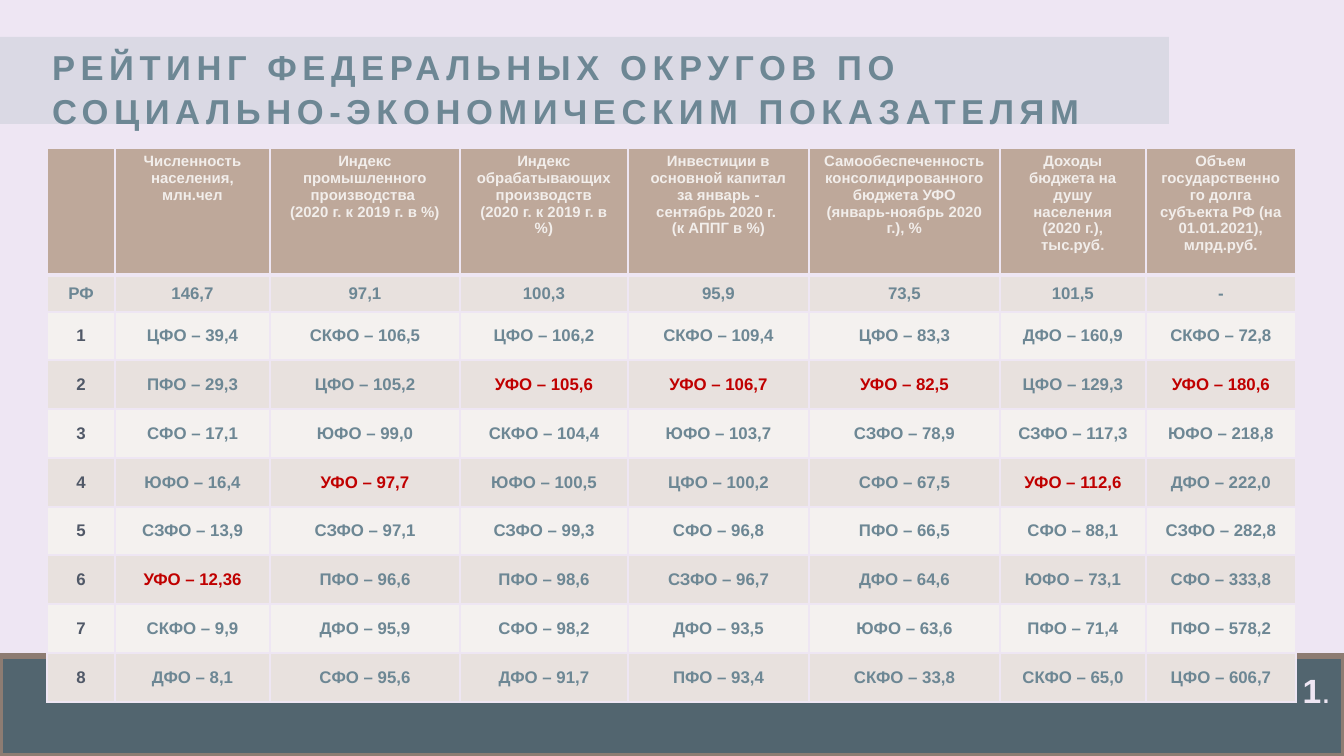
from dataclasses import dataclass

from lxml.etree import SubElement
from pptx import Presentation
from pptx.dml.color import RGBColor
from pptx.enum.shapes import MSO_SHAPE
from pptx.enum.text import MSO_ANCHOR, PP_ALIGN
from pptx.oxml.ns import qn
from pptx.shapes.autoshape import Shape
from pptx.slide import Slide
from pptx.table import _Cell as Cell
from pptx.text.text import _Paragraph as Para
from pptx.util import Emu, Pt

SCALE = 914400 / 134.4

LILAC = RGBColor(0xEE, 0xE6, 0xF3)
STEEL = RGBColor(0x52, 0x65, 0x6F)
BROWN = RGBColor(0x8D, 0x7C, 0x72)
MIST = RGBColor(0xA7, 0xB7, 0xBF)
SLATE = RGBColor(0x6D, 0x87, 0x94)
TAN = RGBColor(0xBE, 0xA8, 0x9A)
CREAM = RGBColor(0xF2, 0xEE, 0xEB)
SAND = RGBColor(0xE8, 0xE1, 0xDE)
PALE = RGBColor(0xF4, 0xF1, 0xEF)
INK = RGBColor(0x50, 0x58, 0x67)
RED = RGBColor(0xC0, 0x00, 0x00)


@dataclass(frozen=True)
class Box:
    left: int
    top: int
    width: int
    height: int


@dataclass(frozen=True)
class Font:
    size: float
    color: RGBColor
    bold: bool = True


@dataclass(frozen=True)
class Column:
    width: int
    head: tuple[str, ...]
    total: str
    ranks: tuple[str, ...]


FOOTER = Box(0, 656, 1344, 100)
BANNER = Box(0, 37, 1169, 87)
GRID = Box(47, 148, 1249, 554)
HEAD_H, TOTAL_H = 127, 37
MARK = "УФО"
TITLE = "РЕЙТИНГ ФЕДЕРАЛЬНЫХ ОКРУГОВ ПО СОЦИАЛЬНО-ЭКОНОМИЧЕСКИМ ПОКАЗАТЕЛЯМ"

COLUMNS = (
    Column(68, (), "РФ", tuple("12345678")),
    Column(155, ("Численность населения, млн.чел",), "146,7",
           ("ЦФО – 39,4", "ПФО – 29,3", "СФО – 17,1", "ЮФО – 16,4",
            "СЗФО – 13,9", "УФО – 12,36", "СКФО – 9,9", "ДФО – 8,1")),
    Column(190, ("Индекс промышленного производства \n(2020 г. к 2019 г. в %)",), "97,1",
           ("СКФО – 106,5", "ЦФО – 105,2", "ЮФО – 99,0", "УФО – 97,7",
            "СЗФО – 97,1", "ПФО – 96,6", "ДФО – 95,9", "СФО – 95,6")),
    Column(168, ("Индекс обрабатывающих", "производств\n(2020 г. к 2019 г. в %)"), "100,3",
           ("ЦФО – 106,2", "УФО – 105,6", "СКФО – 104,4", "ЮФО – 100,5",
            "СЗФО – 99,3", "ПФО – 98,6", "СФО – 98,2", "ДФО – 91,7")),
    Column(181, ("Инвестиции в основной капитал за январь - сентябрь 2020 г. \n(к АППГ в %)",),
           "95,9",
           ("СКФО – 109,4", "УФО – 106,7", "ЮФО – 103,7", "ЦФО – 100,2",
            "СФО – 96,8", "СЗФО – 96,7", "ДФО – 93,5", "ПФО – 93,4")),
    Column(191, ("Самообеспеченность консолидированного бюджета УФО (январь-ноябрь 2020 г.), %",),
           "73,5",
           ("ЦФО – 83,3", "УФО – 82,5", "СЗФО – 78,9", "СФО – 67,5",
            "ПФО – 66,5", "ДФО – 64,6", "ЮФО – 63,6", "СКФО – 33,8")),
    Column(146, ("Доходы бюджета на душу населения (2020 г.), тыс.руб.",), "101,5",
           ("ДФО – 160,9", "ЦФО – 129,3", "СЗФО – 117,3", "УФО – 112,6",
            "СФО – 88,1", "ЮФО – 73,1", "ПФО – 71,4", "СКФО – 65,0")),
    Column(150, ("Объем государственного долга субъекта РФ (на 01.01.2021), млрд.руб.",), "-",
           ("СКФО – 72,8", "УФО – 180,6", "ЮФО – 218,8", "ДФО – 222,0",
            "СЗФО – 282,8", "СФО – 333,8", "ПФО – 578,2", "ЦФО – 606,7")),
)


def px(n: int) -> Emu:
    return Emu(round(n * SCALE))


def place(box: Box) -> tuple[Emu, Emu, Emu, Emu]:
    return px(box.left), px(box.top), px(box.width), px(box.height)


def add_run(para: Para, text: str, font: Font) -> None:
    """Add text as runs, with a line break at each newline."""
    for i, line in enumerate(text.split("\n")):
        if i:
            para.add_line_break()
        run = para.add_run()
        run.text = line
        run.font.name = "Arial"
        run.font.size = Pt(font.size)
        run.font.bold = font.bold
        run.font.color.rgb = font.color


def add_rect(slide: Slide, box: Box, fill: RGBColor) -> Shape:
    rect = slide.shapes.add_shape(MSO_SHAPE.RECTANGLE, *place(box))
    rect.shadow.inherit = False
    rect.fill.solid()
    rect.fill.fore_color.rgb = fill
    rect.line.fill.background()
    rect.text_frame.word_wrap = True
    return rect


def add_footer(slide: Slide) -> None:
    rect = add_rect(slide, FOOTER, STEEL)
    rect.line.color.rgb = BROWN
    rect.line.width = Pt(3.35)
    frame = rect.text_frame
    frame.vertical_anchor = MSO_ANCHOR.BOTTOM
    frame.margin_bottom = px(46)
    para = frame.paragraphs[0]
    para.alignment = PP_ALIGN.RIGHT
    add_run(para, "1", Font(18, LILAC))
    add_run(para, ".", Font(18, LILAC, False))


def add_banner(slide: Slide) -> None:
    rect = add_rect(slide, BANNER, MIST)
    color = rect.fill._xPr.find(qn("a:solidFill"))[0]
    SubElement(color, qn("a:alpha")).set("val", "27000")
    frame = rect.text_frame
    frame.vertical_anchor = MSO_ANCHOR.TOP
    frame.margin_left = px(52)
    para = frame.paragraphs[0]
    para.alignment = PP_ALIGN.LEFT
    para.line_spacing = 1.06
    add_run(para, TITLE, Font(18.5, SLATE))
    para.runs[0].font._element.set("spc", "300")


def add_edge(cell: Cell, side: str, width: float) -> None:
    line = SubElement(cell._tc.get_or_add_tcPr(), qn(f"a:ln{side}"), w=str(Pt(width)))
    fill = SubElement(line, qn("a:solidFill"))
    SubElement(fill, qn("a:srgbClr"), val=str(LILAC))


def fill_cell(cell: Cell, paras: tuple[str, ...], font: Font, row: int) -> None:
    for side in "LRTB":
        thick = (row, side) in ((0, "B"), (1, "T"))
        add_edge(cell, side, 3 if thick else 1)
    cell.fill.solid()
    cell.fill.fore_color.rgb = TAN if row == 0 else SAND if row % 2 else PALE
    cell.margin_left = cell.margin_right = px(13)
    cell.margin_top = cell.margin_bottom = px(5)
    cell.vertical_anchor = MSO_ANCHOR.MIDDLE if row else MSO_ANCHOR.TOP
    frame = cell.text_frame
    for i, text in enumerate(paras):
        para = frame.add_paragraph() if i else frame.paragraphs[0]
        para.alignment = PP_ALIGN.CENTER
        add_run(para, text, font)


def add_grid(slide: Slide) -> None:
    count = len(COLUMNS[0].ranks)
    table = slide.shapes.add_table(count + 2, len(COLUMNS), *place(GRID)).table
    table.first_row = table.horz_banding = False
    rest = GRID.height - HEAD_H - TOTAL_H
    edges = [rest * i // count for i in range(count + 1)]
    heights = [HEAD_H, TOTAL_H] + [b - a for a, b in zip(edges, edges[1:])]
    for row, height in zip(table.rows, heights):
        row.height = px(height)
    for c, col in enumerate(COLUMNS):
        table.columns[c].width = px(col.width)
        fill_cell(table.cell(0, c), col.head, Font(8, CREAM), 0)
        for r, text in enumerate((col.total, *col.ranks), 1):
            color = RED if text.startswith(MARK) else INK if c == 0 and r > 1 else SLATE
            fill_cell(table.cell(r, c), (text,), Font(9, color), r)


def main() -> None:
    deck = Presentation()
    deck.slide_width, deck.slide_height = px(1344), px(756)
    slide = deck.slides.add_slide(deck.slide_layouts[6])
    slide.background.fill.solid()
    slide.background.fill.fore_color.rgb = LILAC
    add_footer(slide)
    add_banner(slide)
    add_grid(slide)
    deck.save("out.pptx")


if __name__ == "__main__":
    main()
